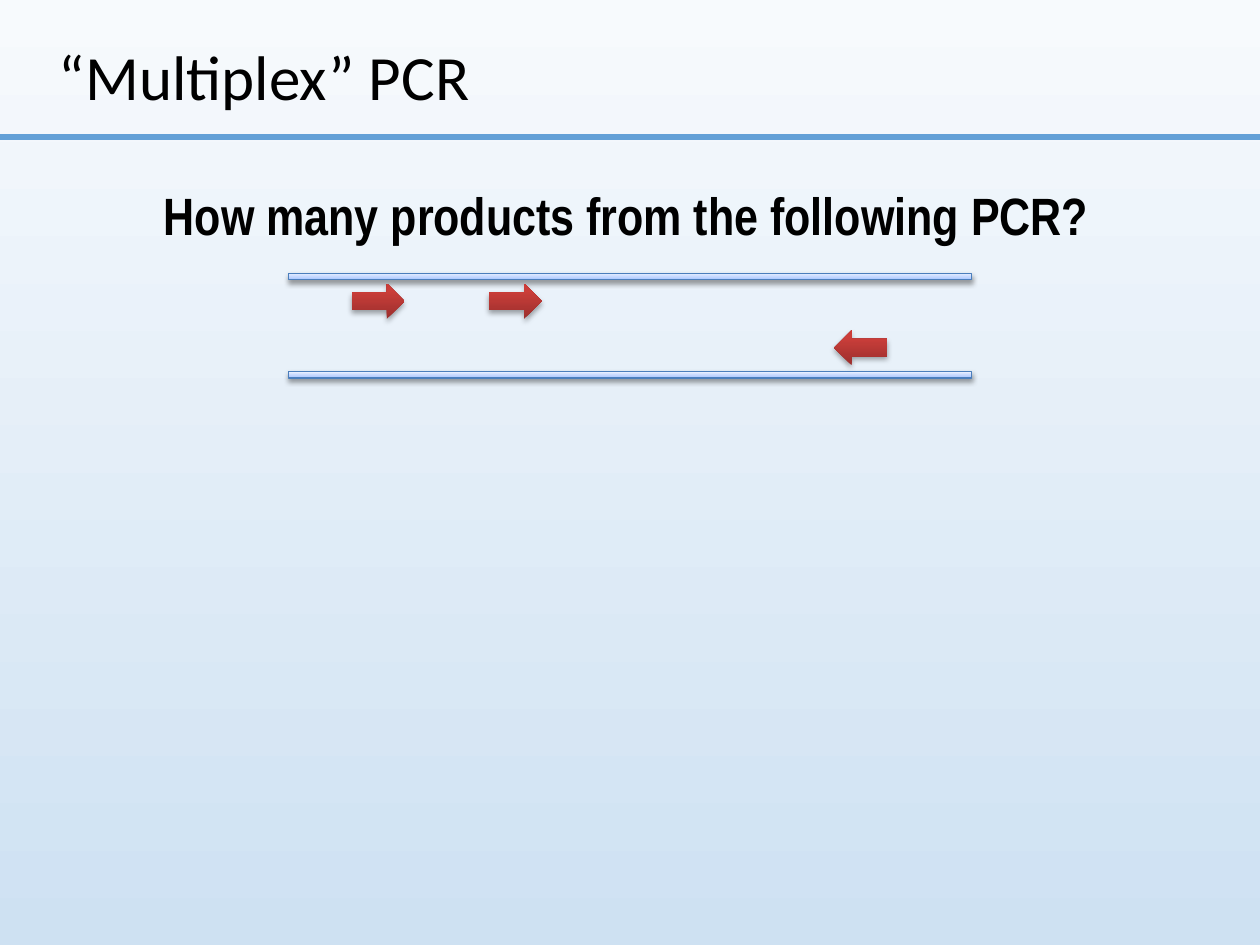
import pptx
import pptx.dml.color
import pptx.enum.shapes
import pptx.enum.text
import pptx.oxml
import pptx.oxml.ns
import pptx.util
from lxml import etree

Pt = pptx.util.Pt
SHAPES = pptx.enum.shapes.MSO_SHAPE
qn = pptx.oxml.ns.qn

STRAND_STOPS = [(0, "A4C4FF"), (35, "BFD4FF"), (100, "E6EEFF")]
PRIMER_STOPS = [(0, "9C2F2D"), (80, "CB3E3A"), (100, "CE3B37")]


def color(hex_string):
    return pptx.dml.color.RGBColor.from_string(hex_string)


def set_gradient(fill, owner, stops, angle):
    """Fill with (percent, colour) stops; owner is the element holding the fill."""
    fill.gradient()
    fill.gradient_angle = angle
    stop_list = next(owner.iter(qn("a:gsLst")))
    for default_stop in list(stop_list):
        stop_list.remove(default_stop)
    for percent, hex_string in stops:
        stop = etree.SubElement(stop_list, qn("a:gs"), pos=str(percent * 1000))
        etree.SubElement(stop, qn("a:srgbClr"), val=hex_string)


def add_shadow(shape, opacity, distance):
    shape.shadow.inherit = False
    effects = shape.element.spPr.find(qn("a:effectLst"))
    shadow = etree.SubElement(
        effects, qn("a:outerShdw"), blurRad=str(Pt(3.1)), dist=str(Pt(distance)),
        dir="5400000", algn="ctr", rotWithShape="0")
    black = etree.SubElement(shadow, qn("a:srgbClr"), val="000000")
    etree.SubElement(black, qn("a:alpha"), val=str(opacity * 1000))


def add_text(slide, text, left, top, width, height, *, font, size, bold=False,
             inset=7.2, anchor="TOP", line_spacing=None, grow=False):
    box = slide.shapes.add_textbox(Pt(left), Pt(top), Pt(width), Pt(height))
    frame = box.text_frame
    frame.word_wrap = True
    frame.margin_left = frame.margin_right = Pt(inset)
    frame.vertical_anchor = pptx.enum.text.MSO_ANCHOR[anchor]
    if grow:
        frame.auto_size = pptx.enum.text.MSO_AUTO_SIZE.SHAPE_TO_FIT_TEXT
    paragraph = frame.paragraphs[0]
    paragraph.line_spacing = line_spacing
    run = paragraph.add_run()
    run.text = text
    run.font.name = font
    run.font.size = Pt(size)
    run.font.bold = bold
    run.font.color.rgb = color("000000")


def add_title_rule(slide, y, width):
    rule = slide.shapes.add_connector(
        pptx.enum.shapes.MSO_CONNECTOR.STRAIGHT, 0, Pt(y), Pt(width), Pt(y))
    rule.line.color.rgb = color("63A0D7")
    rule.line.width = Pt(3.5)
    etree.SubElement(rule.element.spPr, qn("a:effectLst"))


def add_strand(slide, top):
    strand = slide.shapes.add_shape(
        SHAPES.RECTANGLE, Pt(164.88), Pt(top), Pt(390.24), Pt(3.6))
    set_gradient(strand.fill, strand.element, STRAND_STOPS, 90)
    strand.line.color.rgb = color("4B7EBC")
    strand.line.width = Pt(0.75)
    add_shadow(strand, opacity=38, distance=1.6)


def add_primer(slide, direction, left, top):
    primer = slide.shapes.add_shape(
        direction, Pt(left), Pt(top), Pt(30.24), Pt(20.16))
    set_gradient(primer.fill, primer.element, PRIMER_STOPS, 90)
    primer.line.fill.background()
    add_shadow(primer, opacity=35, distance=1.8)


def main():
    deck = pptx.Presentation()
    deck.slide_width, deck.slide_height = Pt(720), Pt(540)
    slide = deck.slides.add_slide(deck.slide_layouts[6])
    set_gradient(slide.background.fill, slide.element,
                 [(0, "F7FAFD"), (100, "CEE1F2")], 270)

    add_title_rule(slide, y=78.5, width=720)
    add_text(slide, "“Multiplex” PCR", 26.64, 18, 666.72, 55.44,
             font="Calibri", size=36, anchor="MIDDLE", line_spacing=0.9)
    add_text(slide, "How many products from the following PCR?",
             93.6, 100.8, 532.8, 43.92,
             font="Arial Narrow", size=30, bold=True, inset=0, grow=True)

    for top in (156.24, 212.4):
        add_strand(slide, top)
    for left in (200.88, 279.36):
        add_primer(slide, SHAPES.RIGHT_ARROW, left, 162)
    add_primer(slide, SHAPES.LEFT_ARROW, 476.64, 188.64)

    deck.save("out.pptx")


if __name__ == "__main__":
    main()
